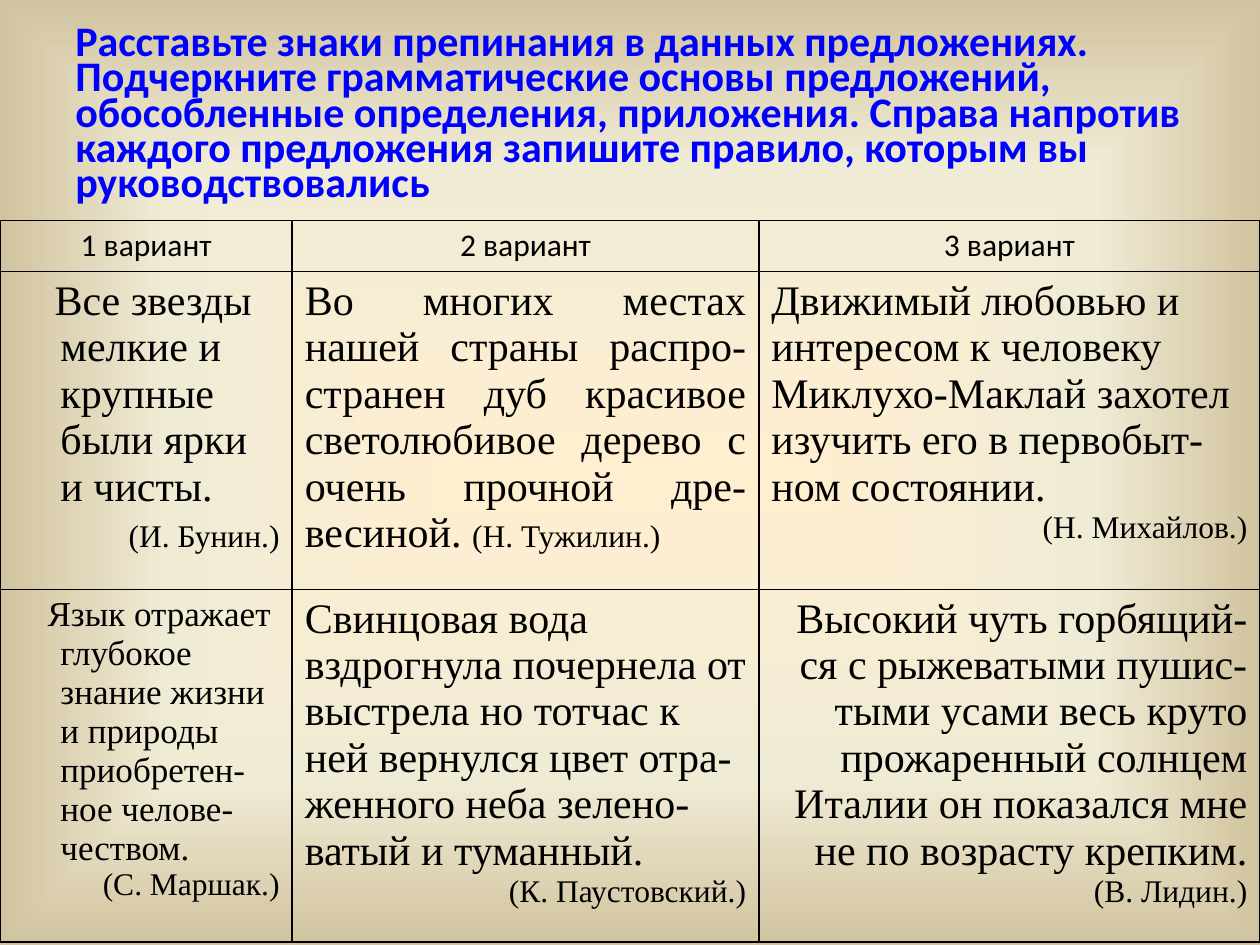
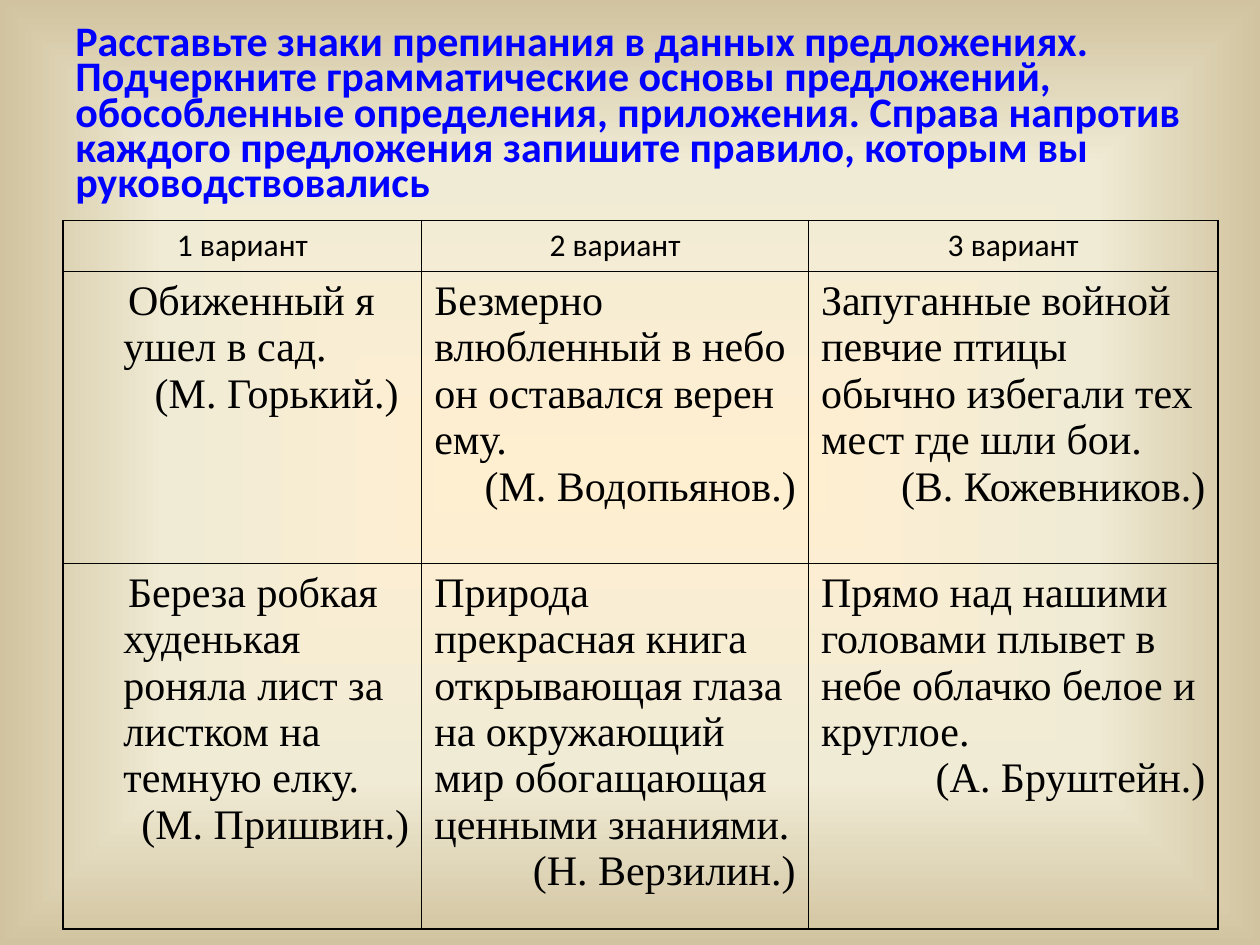
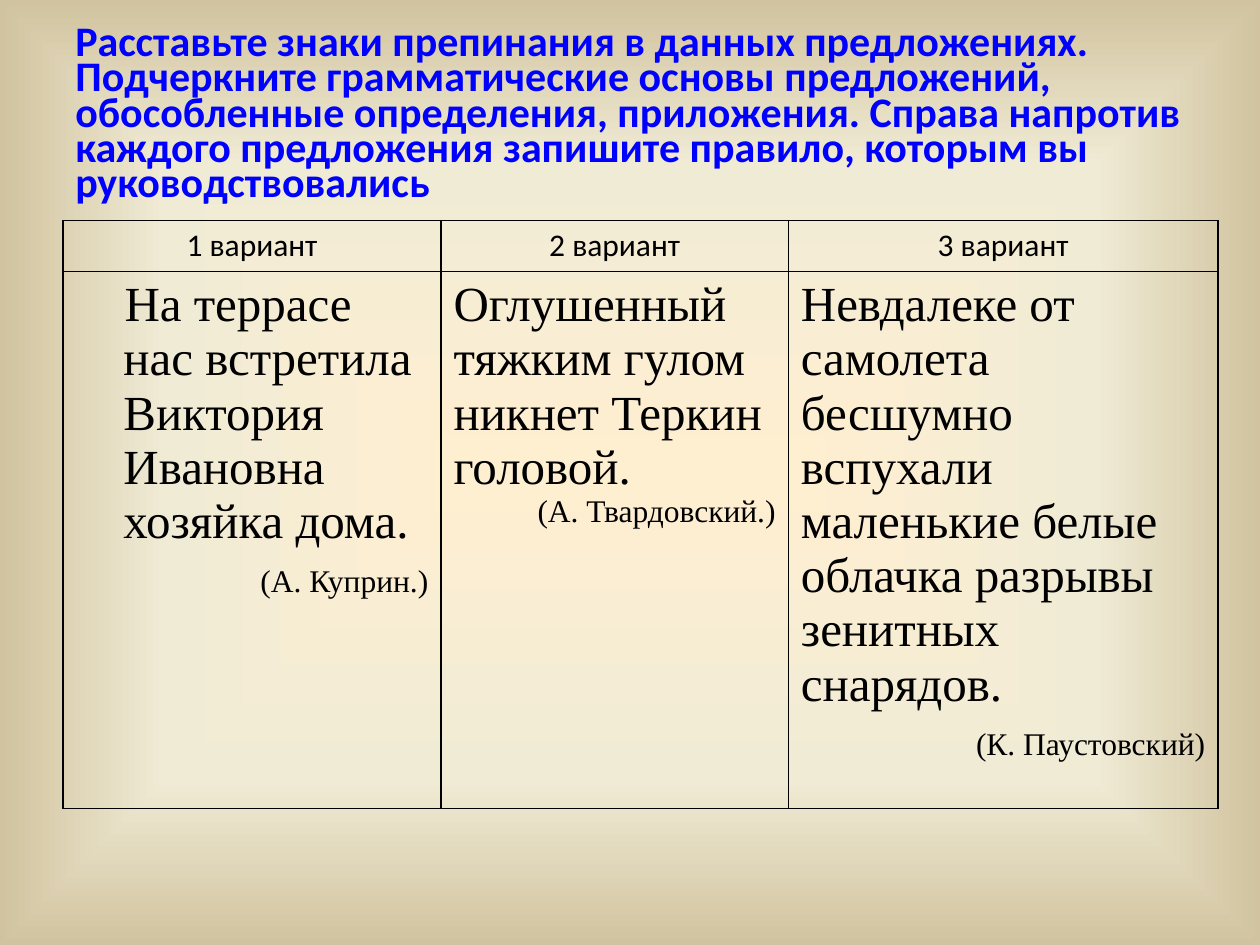
from dataclasses import dataclass

from lxml import etree
from pptx import Presentation
from pptx.dml.color import RGBColor
from pptx.enum import text as tx
from pptx.oxml import ns, parse_xml
from pptx.util import Pt

BLUE = RGBColor(0x00, 0x00, 0xFF)
BLACK = RGBColor(0x00, 0x00, 0x00)
CREAM = RGBColor(0xFF, 0xEF, 0xD1)
IVORY = RGBColor(0xF0, 0xEB, 0xD5)
SAND = RGBColor(0xD1, 0xC3, 0x9F)

SANS, SERIF = "Calibri", "Times New Roman"
LEFT, MID, RIGHT, FULL = (tx.PP_ALIGN.LEFT, tx.PP_ALIGN.CENTER,
                          tx.PP_ALIGN.RIGHT, tx.PP_ALIGN.JUSTIFY)
TOP = 126
HEAD = 29.2
HANG = 27.36

TASK = ("Расставьте знаки препинания в данных предложениях. Подчеркните "
        "грамматические основы предложений, обособленные определения, "
        "приложения. Справа напротив каждого предложения запишите правило, "
        "которым вы руководствовались")


@dataclass
class Quote:
    """A sentence and its author; lead is the first line's start in a hanging cell."""
    text: str
    author: str
    size: float = 24
    small: float = 18
    align: tx.PP_ALIGN = LEFT
    lead: float = 0
    gap: float = 0
    inline: bool = False


def write(par, words, size=24, font=SERIF, color=BLACK, bold=False,
          align=LEFT, before=0, spacing=None):
    par.alignment = align
    par.space_before = Pt(before)
    if spacing:
        par.line_spacing = spacing
    run = par.add_run()
    run.text = words
    face = run.font
    face.name, face.size, face.bold = font, Pt(size), bold
    face.color.rgb = color


def paint(master):
    """Give every slide the glow that fades from the centre to the edges."""
    master.background.fill.gradient()
    old = master.element.find(".//" + ns.qn("a:gradFill"))
    stops = "".join(
        f'<a:gs pos="{pos * 1000}"><a:srgbClr val="{color}"/></a:gs>'
        for pos, color in ((0, CREAM), (65, IVORY), (100, SAND)))
    new = parse_xml(
        f'<a:gradFill {ns.nsdecls("a")} rotWithShape="1"><a:gsLst>{stops}</a:gsLst>'
        '<a:path path="shape"><a:fillToRect l="50000" t="50000" r="50000" '
        'b="50000"/></a:path></a:gradFill>')
    old.getparent().replace(old, new)


def add_task(slide):
    frame = slide.shapes.add_textbox(Pt(36), Pt(21.6), Pt(648), Pt(90)).text_frame
    frame.word_wrap = True
    frame.vertical_anchor = tx.MSO_ANCHOR.MIDDLE
    write(frame.paragraphs[0], TASK, font=SANS, color=BLUE, bold=True, spacing=0.7)


def style(cell):
    """Clear the fill and rule all four sides."""
    props = cell._tc.get_or_add_tcPr()
    for side in ("lnL", "lnR", "lnT", "lnB"):
        line = etree.SubElement(props, ns.qn("a:" + side), w=str(Pt(1)))
        solid = etree.SubElement(line, ns.qn("a:solidFill"))
        etree.SubElement(solid, ns.qn("a:srgbClr"), val=str(BLACK))
    cell.fill.background()


def fill_quote(cell, quote):
    frame = cell.text_frame
    par = frame.paragraphs[0]
    write(par, quote.text, size=quote.size, align=quote.align)
    if quote.lead:
        props = par._p.get_or_add_pPr()
        props.set("marL", str(Pt(HANG)))
        props.set("indent", str(Pt(quote.lead - HANG)))
    if quote.inline:
        write(par, quote.author, size=quote.small, align=quote.align)
    else:
        write(frame.add_paragraph(), quote.author, size=quote.small,
              align=RIGHT, before=quote.gap)


def add_grid(slide, left, cols, rows, quotes):
    heights = [HEAD, *rows]
    grid = slide.shapes.add_table(len(heights), len(cols), Pt(left), Pt(TOP),
                                  Pt(sum(cols)), Pt(sum(heights))).table
    grid.first_row = grid.horz_banding = False
    for col, width in zip(grid.columns, cols):
        col.width = Pt(width)
    for row, height in zip(grid.rows, heights):
        row.height = Pt(height)
    for cell in grid.iter_cells():
        style(cell)
    for num in range(len(cols)):
        write(grid.cell(0, num).text_frame.paragraphs[0], f"{num + 1} вариант",
              size=18, font=SANS, align=MID)
    for i, line in enumerate(quotes, 1):
        for j, quote in enumerate(line):
            fill_quote(grid.cell(i, j), quote)


FIRST = [
    [Quote("Все звезды мелкие и крупные были ярки и чисты.", "(И. Бунин.)",
           lead=24, gap=5.3),
     Quote("Во многих местах нашей страны распро-странен дуб красивое "
           "светолюбивое дерево с очень прочной дре-весиной. ",
           "(Н. Тужилин.)", align=FULL, inline=True),
     Quote("Движимый любовью и интересом к человеку Миклухо-Маклай захотел "
           "изучить его в первобыт-ном состоянии.", "(Н. Михайлов.)")],
    [Quote("Язык отражает глубокое знание жизни и природы приобретен-ное "
           "челове-чеством.", "(С. Маршак.)", size=20, lead=20),
     Quote("Свинцовая вода вздрогнула почернела от выстрела но тотчас к ней "
           "вернулся цвет отра-женного неба зелено-ватый и туманный.",
           "(К. Паустовский.)"),
     Quote("Высокий чуть горбящий-ся с рыжеватыми пушис-тыми усами весь круто "
           "прожаренный солнцем Италии он показался мне не по возрасту крепким. ",
           "(В. Лидин.)", align=RIGHT, inline=True)],
]

SECOND = [
    [Quote("Обиженный я ушел в сад.", "(М. Горький.) ", small=24, lead=30),
     Quote("Безмерно влюбленный в небо он оставался верен ему.",
           "(М. Водопьянов.)", small=24),
     Quote("Запуганные войной певчие птицы обычно избегали тех мест где шли бои.",
           "(В. Кожевников.)", small=24)],
    [Quote("Береза робкая худенькая роняла лист за листком на темную елку.",
           "(М. Пришвин.)", small=24, lead=30),
     Quote("Природа прекрасная книга открывающая глаза на окружающий мир "
           "обогащающая ценными знаниями.", "(Н. Верзилин.)", small=24),
     Quote("Прямо над нашими головами плывет в небе облачко белое и круглое.",
           "(А. Бруштейн.)", small=24)],
]

THIRD = [
    [Quote("На террасе нас встретила Виктория Ивановна хозяйка дома.",
           "(А. Куприн.)", size=28, lead=28, gap=8.9),
     Quote("Оглушенный тяжким гулом никнет Теркин головой.",
           "(А. Твардовский.)", size=28),
     Quote("Невдалеке от самолета бесшумно вспухали маленькие белые облачка "
           "разрывы зенитных снарядов.", "(К. Паустовский)", size=28, gap=8.9)],
]


def main():
    prs = Presentation()
    prs.slide_width, prs.slide_height = Pt(720), Pt(540)
    paint(prs.slide_master)
    pages = (
        (0, (167, 266.6, 286.4), (181.6, 186.2), FIRST),
        (36, (205, 221, 234), (166.8, 192.6), SECOND),
        (36, (216, 198.5, 245.5), (286.2,), THIRD),
    )
    for page in pages:
        slide = prs.slides.add_slide(prs.slide_layouts[6])
        add_task(slide)
        add_grid(slide, *page)
    prs.save("out.pptx")


if __name__ == "__main__":
    main()
